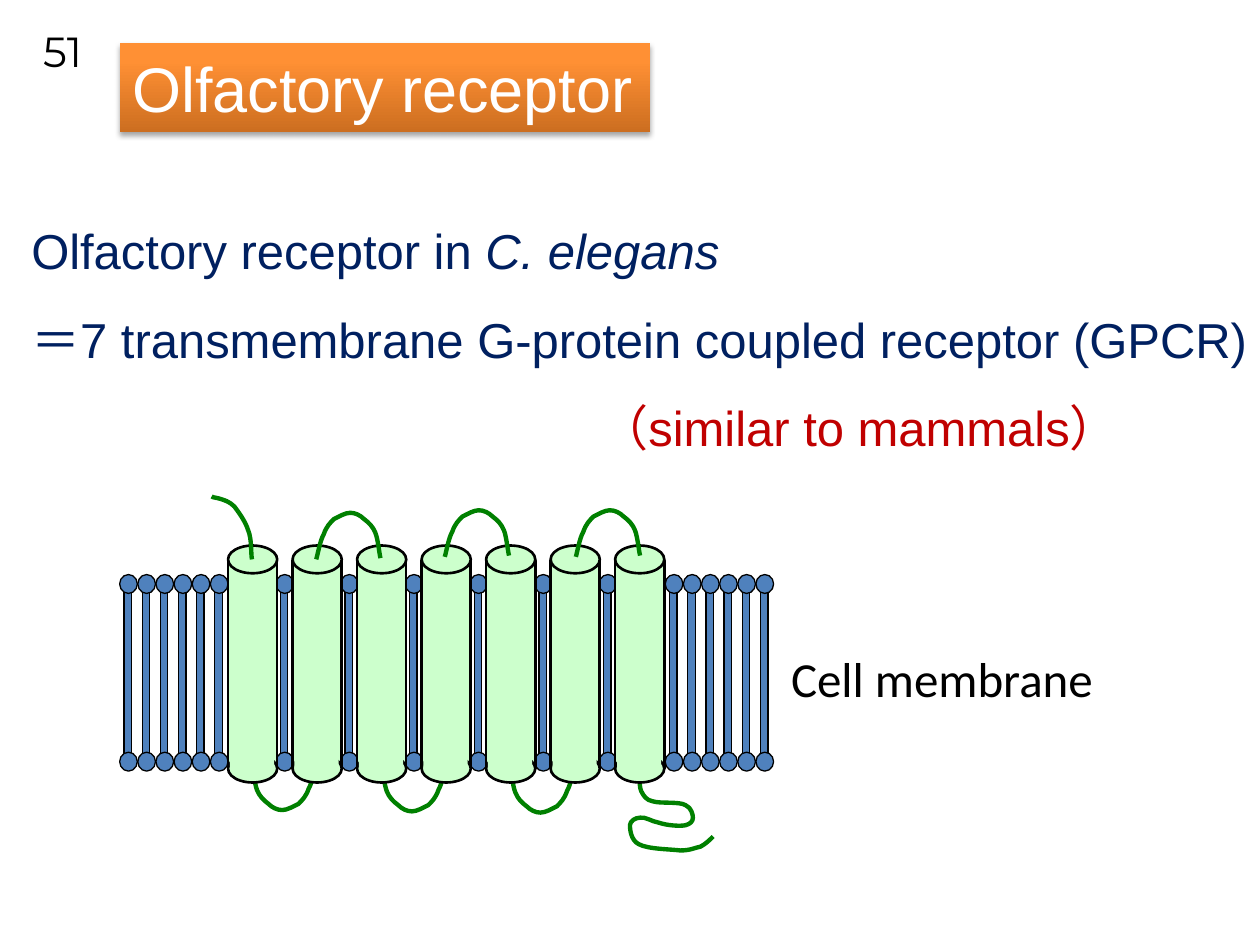
import copy

import lxml.etree
import pptx
import pptx.dml.color
import pptx.enum.shapes
import pptx.enum.text
import pptx.oxml
import pptx.oxml.ns
import pptx.util

Inches = pptx.util.Inches
Pt = pptx.util.Pt
RGBColor = pptx.dml.color.RGBColor
qn = pptx.oxml.ns.qn
RECT = pptx.enum.shapes.MSO_SHAPE.RECTANGLE
OVAL = pptx.enum.shapes.MSO_SHAPE.OVAL
FIT = pptx.enum.text.MSO_AUTO_SIZE.SHAPE_TO_FIT_TEXT

BLACK = RGBColor(0x00, 0x00, 0x00)
WHITE = RGBColor(0xFF, 0xFF, 0xFF)
NAVY = RGBColor(0x00, 0x20, 0x60)
RED = RGBColor(0xC0, 0x00, 0x00)
LIPID_BLUE = RGBColor(0x4F, 0x81, 0xBD)
HELIX_GREEN = RGBColor(0xCC, 0xFF, 0xCC)
LOOP_GREEN = RGBColor(0x00, 0x80, 0x00)
ORANGE_DARK = RGBColor(0xCC, 0x6E, 0x20)
ORANGE_MID = RGBColor(0xFF, 0x90, 0x34)
ORANGE_LIGHT = RGBColor(0xFF, 0x91, 0x36)


def add_part(shapes, kind, box, color, outline):
    part = shapes.add_shape(kind, *map(Inches, box))
    part.shadow.inherit = False
    part.fill.solid()
    part.fill.fore_color.rgb = color
    if outline:
        part.line.color.rgb = BLACK
        part.line.width = Pt(outline)
    else:
        part.line.fill.background()


def add_curve(shapes, points):
    builder = shapes.build_freeform(*points[0], scale=Inches(1) / 1000)
    builder.add_line_segments(points[1:], close=False)
    curve = builder.convert_to_shape()
    curve.shadow.inherit = False
    curve.fill.background()
    curve.line.color.rgb = LOOP_GREEN
    curve.line.width = Pt(2.5)
    segments = list(curve._element.iter(qn("a:lnTo")))
    for i in range(0, len(segments), 3):
        bezier = lxml.etree.Element(qn("a:cubicBezTo"))
        segments[i].addprevious(bezier)
        for segment in segments[i:i + 3]:
            bezier.append(segment[0])
            segment.getparent().remove(segment)


prs = pptx.Presentation()
prs.slide_width = Inches(10)
prs.slide_height = Inches(7.5)
slide = prs.slides.add_slide(prs.slide_layouts[6])

title = slide.shapes.add_shape(RECT, Inches(0.95), Inches(0.34), Inches(4.21), Inches(0.71))
title.line.fill.background()
title.fill.gradient()
title.fill.gradient_angle = 90
dark, light = title.fill.gradient_stops
dark.color.rgb, dark.position = ORANGE_DARK, 0
light.color.rgb, light.position = ORANGE_MID, 0.8
last_stop = title._element.spPr.findall(".//" + qn("a:gs"))[-1]
last_stop.addnext(copy.deepcopy(last_stop))
end = title.fill.gradient_stops[2]
end.color.rgb, end.position = ORANGE_LIGHT, 1
title._element.spPr.append(pptx.oxml.parse_xml(
    '<a:effectLst xmlns:a="http://schemas.openxmlformats.org/drawingml/2006/main">'
    '<a:outerShdw blurRad="39370" dist="22860" dir="5400000" rotWithShape="0">'
    '<a:srgbClr val="000000"><a:alpha val="35000"/></a:srgbClr>'
    '</a:outerShdw></a:effectLst>'))
title.text_frame.word_wrap = False
title.text_frame.auto_size = FIT
title_line = title.text_frame.paragraphs[0]
title_line.text = "Olfactory receptor"
title_line.alignment = pptx.enum.text.PP_ALIGN.LEFT
title_line.font.name = "Arial"
title_line.font.size = Pt(36)
title_line.font.color.rgb = WHITE

membrane = slide.shapes.add_group_shape().shapes
lipid_lefts = [start + step * i
               for start, step in ((0.95, 0.144), (5.28, 0.144), (2.19, 0.513))
               for i in range(6)]
for left in lipid_lefts:
    add_part(membrane, RECT, (left + 0.035, 4.63, 0.06, 1.42), LIPID_BLUE, 0.75)
    for top in (4.56, 5.97):
        add_part(membrane, OVAL, (left, top, 0.14, 0.15), LIPID_BLUE, 0.75)

receptor = slide.shapes.add_group_shape().shapes
c_terminus = [
    (5080, 6120), (5080, 6140), (5070, 6240), (5090, 6280), (5110, 6320), (5130, 6350),
    (5180, 6360), (5240, 6380), (5390, 6360), (5440, 6390), (5490, 6410), (5500, 6470),
    (5500, 6490), (5500, 6520), (5480, 6540), (5440, 6550), (5390, 6560), (5290, 6550),
    (5230, 6530), (5170, 6520), (5120, 6480), (5080, 6490), (5040, 6490), (5000, 6520),
    (5000, 6550), (5000, 6590), (5010, 6670), (5070, 6700), (5140, 6740), (5320, 6740),
    (5400, 6750), (5480, 6750), (5510, 6730), (5560, 6720), (5600, 6700), (5640, 6660),
    (5660, 6640)]
n_terminus = [
    (2000, 4440), (1990, 4400), (2000, 4280), (1970, 4210), (1950, 4140), (1890, 4060),
    (1860, 4020), (1820, 3980), (1780, 3970), (1750, 3960), (1720, 3950), (1690, 3950),
    (1680, 3940)]
loop = [
    (0, 0), (10, -30), (30, -150), (60, -200), (80, -260), (110, -290), (140, -320),
    (180, -340), (230, -370), (270, -370), (310, -370), (350, -350), (380, -320),
    (420, -290), (450, -260), (470, -210), (490, -160), (500, -50), (510, -10)]

add_curve(receptor, c_terminus)
for x, y in ((2510, 6060), (3540, 6070), (4560, 6080)):
    add_curve(receptor, [(x - dx, y - dy) for dx, dy in loop])
for i in range(7):
    left = 1.81 + 0.512 * i
    add_part(receptor, RECT, (left, 4.45, 0.39, 1.65), HELIX_GREEN, 1.5)
    for top in (4.33, 5.99):
        add_part(receptor, OVAL, (left, top, 0.39, 0.22), HELIX_GREEN, 1.5)
    add_part(receptor, RECT, (left + 0.015, 5.91, 0.35, 0.19), HELIX_GREEN, None)
add_curve(receptor, n_terminus)
for x, y in ((2510, 4440), (3530, 4420), (4570, 4420)):
    add_curve(receptor, [(x + dx, y + dy) for dx, dy in loop])

summary = slide.shapes.add_textbox(Inches(0.15), Inches(1.47), Inches(10.03), Inches(2.16)).text_frame
summary.word_wrap = False
summary.auto_size = FIT
summary_lines = [
    ("Olfactory receptor in ", NAVY),
    ("＝7 transmembrane G-protein coupled receptor (GPCR)", NAVY),
    ("（similar to mammals）", RED)]
for i, (words, color) in enumerate(summary_lines):
    line = summary.paragraphs[0] if i == 0 else summary.add_paragraph()
    line.add_run().text = words
    line.line_spacing = 1.5
    line.font.name = "Arial"
    line.font.size = Pt(28)
    line.font.color.rgb = color
species = summary.paragraphs[0].add_run()
species.text = "C. elegans"
species.font.italic = True
summary.paragraphs[2]._p.get_or_add_pPr().set("marL", str(Inches(4.51)))

labels = [
    ("Cell membrane", (6.18, 5.1, 2.62, 0.57), "Calibri", 28),
    ("51", (-0.16, 0, 0.91, 0.8), "Montserrat", 24)]
for words, box, font, size in labels:
    label = slide.shapes.add_textbox(*map(Inches, box)).text_frame
    label.word_wrap = words == "51"
    line = label.paragraphs[0]
    line.text = words
    line.font.name = font
    line.font.size = Pt(size)
    line.font.color.rgb = BLACK
label.vertical_anchor = pptx.enum.text.MSO_ANCHOR.MIDDLE
line.alignment = pptx.enum.text.PP_ALIGN.RIGHT

prs.save("out.pptx")
